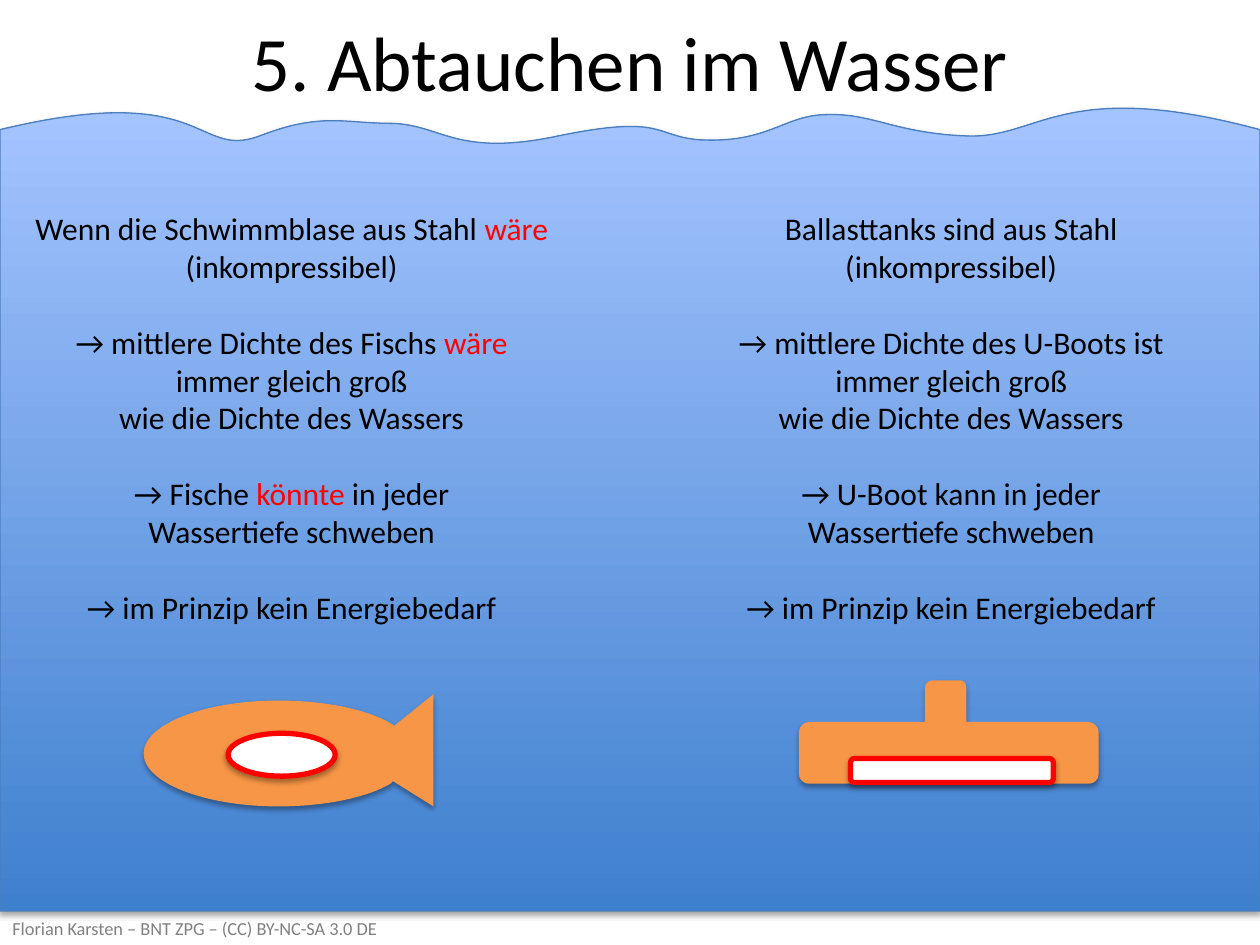
from lxml.etree import SubElement
from pptx import Presentation
from pptx.dml.color import RGBColor
from pptx.enum.shapes import MSO_SHAPE as Shape
from pptx.enum.text import MSO_ANCHOR as Anchor, MSO_AUTO_SIZE as AutoSize, PP_ALIGN as Align
from pptx.oxml.ns import qn
from pptx.util import Inches, Pt

BLACK = RGBColor(0x00, 0x00, 0x00)
WHITE = RGBColor(0xFF, 0xFF, 0xFF)
RED = RGBColor(0xFF, 0x00, 0x00)
GREY = RGBColor(0x80, 0x80, 0x80)
ORANGE = RGBColor(0xF7, 0x96, 0x46)
DEEP_WATER = RGBColor(0x3F, 0x80, 0xCE)
LIGHT_WATER = RGBColor(0xA4, 0xC4, 0xFF)
WATERLINE = RGBColor(0x4B, 0x7E, 0xBC)

WATER = [
    (0, 1.03), (1.65, 0.63, 1.55, 1.27, 2.06, 1.08),
    (2.55, 0.89, 2.73, 0.98, 3.11, 0.98), (3.5, 0.99, 3.61, 1.24, 4.38, 1.09),
    (5.28, 0.9, 5.18, 1.08, 5.55, 1.11), (6.11, 1.14, 6.22, 0.91, 6.57, 0.91),
    (6.93, 0.9, 7.11, 1.06, 7.68, 1.08), (8.25, 1.1, 8.44, 0.61, 10, 1.03),
    (10, 7.23), (0, 7.23), (0, 1.03),
]
FISH = [
    (3.44, 5.51), (3.44, 6.4), (3.12, 6.2), (3.1, 6.22),
    (2.91, 6.33, 2.58, 6.4, 2.21, 6.4), (1.62, 6.4, 1.14, 6.21, 1.14, 5.98),
    (1.14, 5.75, 1.62, 5.56, 2.21, 5.56), (2.58, 5.56, 2.91, 5.63, 3.1, 5.74),
    (3.13, 5.76),
]
SUBMARINE = [
    (7.4, 5.4), (7.62, 5.4), (7.65, 5.4, 7.67, 5.43, 7.67, 5.46), (7.67, 5.73),
    (8.64, 5.73), (8.68, 5.73, 8.72, 5.77, 8.72, 5.81),
    (8.72, 6.14), (8.72, 6.19, 8.68, 6.22, 8.64, 6.22),
    (6.42, 6.22), (6.38, 6.22, 6.34, 6.19, 6.34, 6.14),
    (6.34, 5.81), (6.34, 5.77, 6.38, 5.73, 6.42, 5.73),
    (7.34, 5.73), (7.34, 5.46), (7.34, 5.43, 7.37, 5.4, 7.4, 5.4),
]
FISH_TEXT = [
    "Wenn die Schwimmblase aus Stahl *wäre\n*(inkompressibel)",
    "→ mittlere Dichte des Fischs *wäre\n*immer gleich groß\nwie die Dichte des Wassers",
    "→ Fische *könnte* in jeder\nWassertiefe schweben",
    "→ im Prinzip kein Energiebedarf",
]
SUBMARINE_TEXT = [
    "Ballasttanks sind aus Stahl",
    "(inkompressibel)",
    "→ mittlere Dichte des U-Boots ist\nimmer gleich groß\nwie die Dichte des Wassers",
    "→ U-Boot kann in jeder\nWassertiefe schweben",
    "→ im Prinzip kein Energiebedarf",
]


def write(para, text, size=18, color=BLACK, accent=RED, align=Align.LEFT, before=0):
    """Write text into a paragraph, with parts between asterisks in the accent colour."""
    para.alignment = align
    para.space_before = Pt(before)
    for part, piece in enumerate(text.split("*")):
        for row, line in enumerate(piece.split("\n")):
            if row:
                para.add_line_break()
            if line:
                span = para.add_run()
                span.text = line
                span.font.name = "Calibri"
                span.font.size = Pt(size)
                span.font.color.rgb = accent if part % 2 else color


class Painter:
    """Hold the style and the current slide."""

    def __init__(self, page):
        """Keep the slide to draw on."""
        self.page = page
        self.line_height = 21.8

    def finish(self, shape, fill=None, line=None, width=0):
        """Give a shape its fill, line and soft shadow."""
        if fill:
            shape.fill.solid()
            shape.fill.fore_color.rgb = fill
        if line:
            shape.line.color.rgb = line
            shape.line.width = Pt(width)
        else:
            shape.line.fill.background()
        shape.shadow.inherit = False
        effects = shape._element.spPr.find(qn("a:effectLst"))
        shadow = SubElement(effects, qn("a:outerShdw"), blurRad="40000", dist="23000",
                            dir="5400000", rotWithShape="0")
        color = SubElement(shadow, qn("a:srgbClr"), val="000000")
        SubElement(color, qn("a:alpha"), val="35000")

    def outline(self, steps, frame, **style):
        """Draw a closed outline of lines (x, y) and cubic curves (two controls and an end)."""
        left, top, width, height = map(Inches, frame)
        ends = [(Inches(step[-2]), Inches(step[-1])) for step in steps]
        builder = self.page.shapes.build_freeform(*ends[0])
        builder.add_line_segments(ends[1:], close=True)
        shape = builder.convert_to_shape()
        shape.left, shape.top, shape.width, shape.height = left, top, width, height

        track = next(shape._element.iter(qn("a:path")))
        track.set("w", str(width))
        track.set("h", str(height))
        for child in list(track):
            track.remove(child)
        for index, step in enumerate(steps):
            kind = "cubicBezTo" if len(step) == 6 else "lnTo" if index else "moveTo"
            segment = SubElement(track, qn(f"a:{kind}"))
            for x, y in zip(step[::2], step[1::2]):
                SubElement(segment, qn("a:pt"), x=str(Inches(x) - left), y=str(Inches(y) - top))
        SubElement(track, qn("a:close"))
        self.finish(shape, **style)
        return shape

    def water(self, steps, frame):
        """Draw the water with its vertical gradient."""
        shape = self.outline(steps, frame, line=WATERLINE, width=0.75)
        shape.fill.gradient()
        shape.fill.gradient_angle = 90
        for stop, color, position in zip(shape.fill.gradient_stops, (DEEP_WATER, LIGHT_WATER), (0, 1)):
            stop.color.rgb = color
            stop.position = position

    def chamber(self, kind, *frame):
        """Draw a rigid white chamber with a red wall."""
        shape = self.page.shapes.add_shape(kind, *map(Inches, frame))
        self.finish(shape, fill=WHITE, line=RED, width=3)

    def title(self, text):
        """Fill and place the title placeholder."""
        box = self.page.shapes.title
        box.left, box.top, box.width, box.height = map(Inches, (0, 0, 10, 0.97))
        box.text_frame.vertical_anchor = Anchor.MIDDLE
        write(box.text_frame.paragraphs[0], text, size=44, align=Align.CENTER)

    def column(self, paragraphs, *frame):
        """Add centred paragraphs, each conclusion set off by one line."""
        box = self.page.shapes.add_textbox(*map(Inches, frame))
        box.text_frame.word_wrap = False
        box.text_frame.auto_size = AutoSize.SHAPE_TO_FIT_TEXT
        for index, text in enumerate(paragraphs):
            para = box.text_frame.add_paragraph() if index else box.text_frame.paragraphs[0]
            gap = self.line_height if text.startswith("→") else 0
            write(para, text, align=Align.CENTER, before=gap)

    def footer(self, text):
        """Add the credit line at the bottom."""
        box = self.page.shapes.add_textbox(*map(Inches, (0, 7.23, 7.94, 0.27)))
        box.text_frame.word_wrap = True
        box.text_frame.vertical_anchor = Anchor.MIDDLE
        write(box.text_frame.paragraphs[0], text, size=10.5, color=GREY)


def main():
    """Build the slide and save it."""
    deck = Presentation()
    deck.slide_width, deck.slide_height = Inches(10), Inches(7.5)
    painter = Painter(deck.slides.add_slide(deck.slide_layouts[5]))
    painter.water(WATER, (0, 0.86, 10, 6.37))
    painter.title("5. Abtauchen im Wasser")
    painter.footer("Florian Karsten – BNT ZPG – (CC) BY-NC-SA 3.0 DE")
    painter.outline(FISH, (1.14, 5.51, 2.3, 0.89), fill=ORANGE)
    painter.outline(SUBMARINE, (6.34, 5.4, 2.38, 0.82), fill=ORANGE)
    painter.column(FISH_TEXT, 0.15, 1.61, 4.33, 3.74)
    painter.column(SUBMARINE_TEXT, 5.73, 1.61, 3.64, 3.43)
    painter.chamber(Shape.ROUNDED_RECTANGLE, 6.75, 6.02, 1.61, 0.19)
    painter.chamber(Shape.OVAL, 1.81, 5.82, 0.85, 0.34)
    deck.save("out.pptx")


if __name__ == "__main__":
    main()
